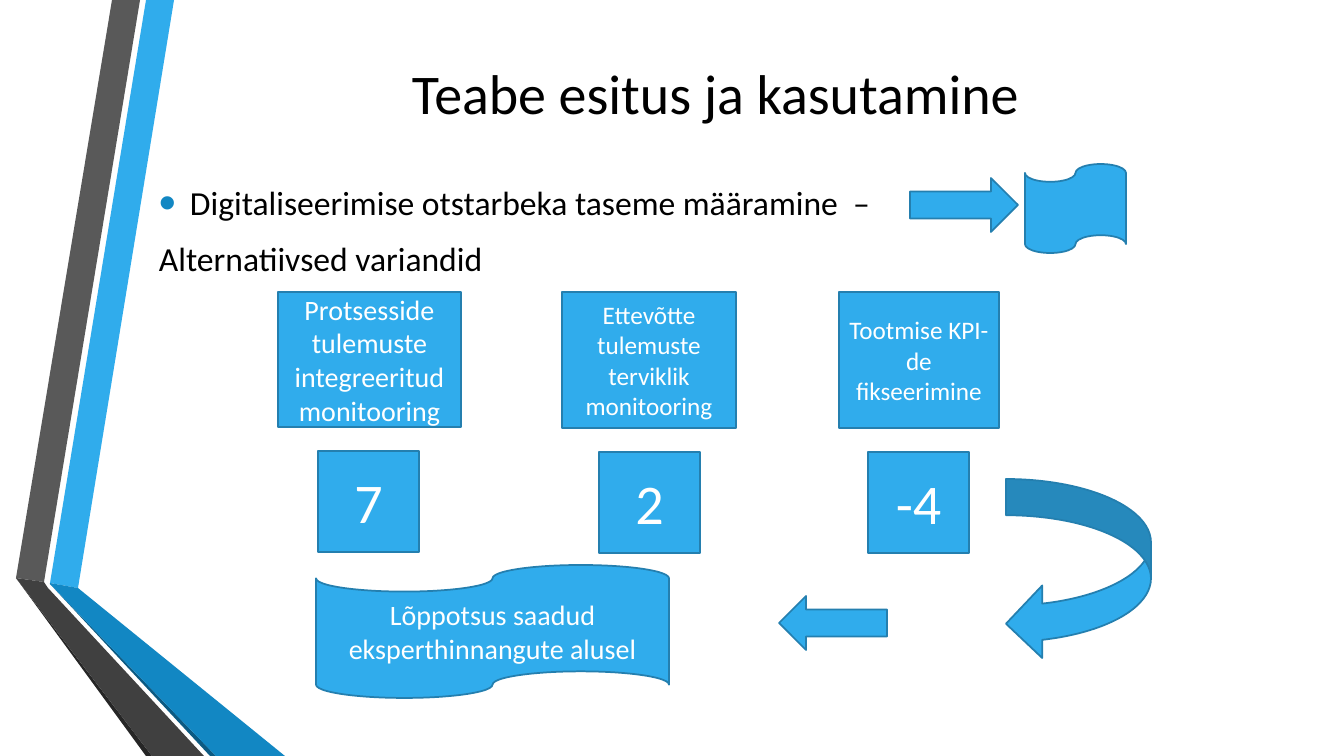
from lxml.etree import SubElement
from pptx import Presentation
from pptx.dml.color import RGBColor
from pptx.enum.shapes import MSO_SHAPE as SHAPE
from pptx.enum.text import MSO_ANCHOR as ANCHOR, PP_ALIGN as ALIGN
from pptx.oxml.ns import qn
from pptx.util import Pt

PX = 914400 / 100.8
FONT = "Calibri"
COLORS = {
    "blue": "30ACEC", "outline": "247FAF", "deep_blue": "1287C3", "navy": "0C5A82",
    "gray": "595959", "dark_gray": "404040", "charcoal": "262626",
    "black": "000000", "white": "FFFFFF",
}
RIBBONS = [
    ("blue", [(50, 583), (78, 588), (174, 0), (146, 0)]),
    ("gray", [(140, 0), (112, 0), (16, 578), (44, 582)]),
    ("charcoal", [(16, 578), (146, 756), (152, 756)]),
    ("navy", [(50, 584), (210, 756), (216, 756)]),
    ("deep_blue", [(50, 584), (216, 756), (285, 756), (78, 588), (50, 583)]),
    ("dark_gray", [(204, 756), (48, 588), (44, 582), (16, 578), (152, 756)]),
]
VARIANTS = [
    ((278, 292, 183, 135), 20,
     ["Protsesside tulemuste", "integreeritud", "monitooring"], (318, 451), "7"),
    ((562, 292, 174, 136), 18,
     ["Ettevõtte tulemuste terviklik", "monitooring"], (599, 452), "2"),
    ((839, 292, 160, 136), 18,
     ["Tootmise KPI-de", "fikseerimine"], (868, 452), "-4"),
]
SCORE_SIZE = 101


def emu(*lengths):
    """Turn px lengths into EMU."""
    return [round(length * PX) for length in lengths]


def color(name):
    """Return the named colour."""
    return RGBColor.from_string(COLORS[name])


def write(frame, lines, size, ink, align=ALIGN.CENTER, anchor=ANCHOR.MIDDLE):
    """Write one paragraph per line into a text frame and return the paragraphs."""
    frame.word_wrap = True
    frame.vertical_anchor = anchor
    for index, line in enumerate(lines):
        paragraph = frame.add_paragraph() if index else frame.paragraphs[0]
        paragraph.alignment = align
        run = paragraph.add_run()
        run.text = line
        run.font.size = Pt(size)
        run.font.name = FONT
        run.font.color.rgb = color(ink)
    return frame.paragraphs


def add_block(slide, kind, box, lines=(), size=20):
    """Add an outlined blue shape with optional white text."""
    shape = slide.shapes.add_shape(kind, *emu(*box))
    shape.shadow.inherit = False
    shape.fill.solid()
    shape.fill.fore_color.rgb = color("blue")
    shape.line.color.rgb = color("outline")
    shape.line.width = Pt(1.25)
    write(shape.text_frame, lines, size, "white")


def add_ribbons(slide, left, top):
    """Draw the folded ribbons along the left edge."""
    for fill, points in RIBBONS:
        corners = [(left + x, top + y) for x, y in points]
        builder = slide.shapes.build_freeform(*corners[0], scale=PX)
        builder.add_line_segments(corners[1:], close=True)
        ribbon = builder.convert_to_shape()
        ribbon.shadow.inherit = False
        ribbon.fill.solid()
        ribbon.fill.fore_color.rgb = color(fill)
        ribbon.line.fill.background()


def add_title(slide, box):
    """Add the centred title."""
    title = slide.shapes.add_textbox(*emu(*box))
    write(title.text_frame, ["Teabe esitus ja kasutamine"], 40, "black")


def add_intro(slide, box):
    """Add the bulleted statement and the line below it."""
    frame = slide.shapes.add_textbox(*emu(*box)).text_frame
    frame.margin_top = 0
    lines = ["Digitaliseerimise otstarbeka taseme määramine  –", "Alternatiivsed variandid"]
    statement, variants = write(frame, lines, 24, "black", ALIGN.LEFT, ANCHOR.TOP)
    statement.space_after = Pt(6)
    variants.space_before = Pt(4.8)
    properties = statement._p.get_or_add_pPr()
    indent, = emu(31)
    properties.set("marL", str(indent))
    properties.set("indent", str(-indent))
    bullet_color = SubElement(properties, qn("a:buClr"))
    SubElement(bullet_color, qn("a:srgbClr"), val=COLORS["deep_blue"])
    SubElement(properties, qn("a:buSzPct"), val="145000")
    SubElement(properties, qn("a:buFont"), typeface="Arial")
    SubElement(properties, qn("a:buChar"), char="•")


def add_goal(slide, left, top):
    """Add the arrow that points to the empty tape."""
    add_block(slide, SHAPE.RIGHT_ARROW, (left, top + 14, 108, 54))
    add_block(slide, SHAPE.FLOWCHART_PUNCHED_TAPE, (left + 115, top, 101, 89))


def add_variants(slide):
    """Add each variant with its score below."""
    for box, size, lines, corner, score in VARIANTS:
        add_block(slide, SHAPE.RECTANGLE, box, lines, size)
        add_block(slide, SHAPE.RECTANGLE, (*corner, SCORE_SIZE, SCORE_SIZE), [score], 40)


def add_decision(slide, left, top):
    """Add the final decision and the arrows leading back to it."""
    decision = ["Lõppotsus saadud eksperthinnangute alusel"]
    add_block(slide, SHAPE.FLOWCHART_PUNCHED_TAPE, (left, top + 86, 353, 133), decision)
    add_block(slide, SHAPE.LEFT_ARROW, (left + 463, top + 117, 108, 54))
    add_block(slide, SHAPE.CURVED_LEFT_ARROW, (left + 690, top, 145, 181))


def main():
    """Build the slide and save it."""
    presentation = Presentation()
    presentation.slide_width, presentation.slide_height = emu(1344, 756)
    slide = presentation.slides.add_slide(presentation.slide_layouts[6])
    add_ribbons(slide, 0, 0)
    add_title(slide, (163, 20, 1105, 145))
    add_intro(slide, (149, 182, 1119, 106))
    add_goal(slide, 910, 164)
    add_variants(slide)
    add_decision(slide, 316, 479)
    presentation.save("out.pptx")


if __name__ == "__main__":
    main()
